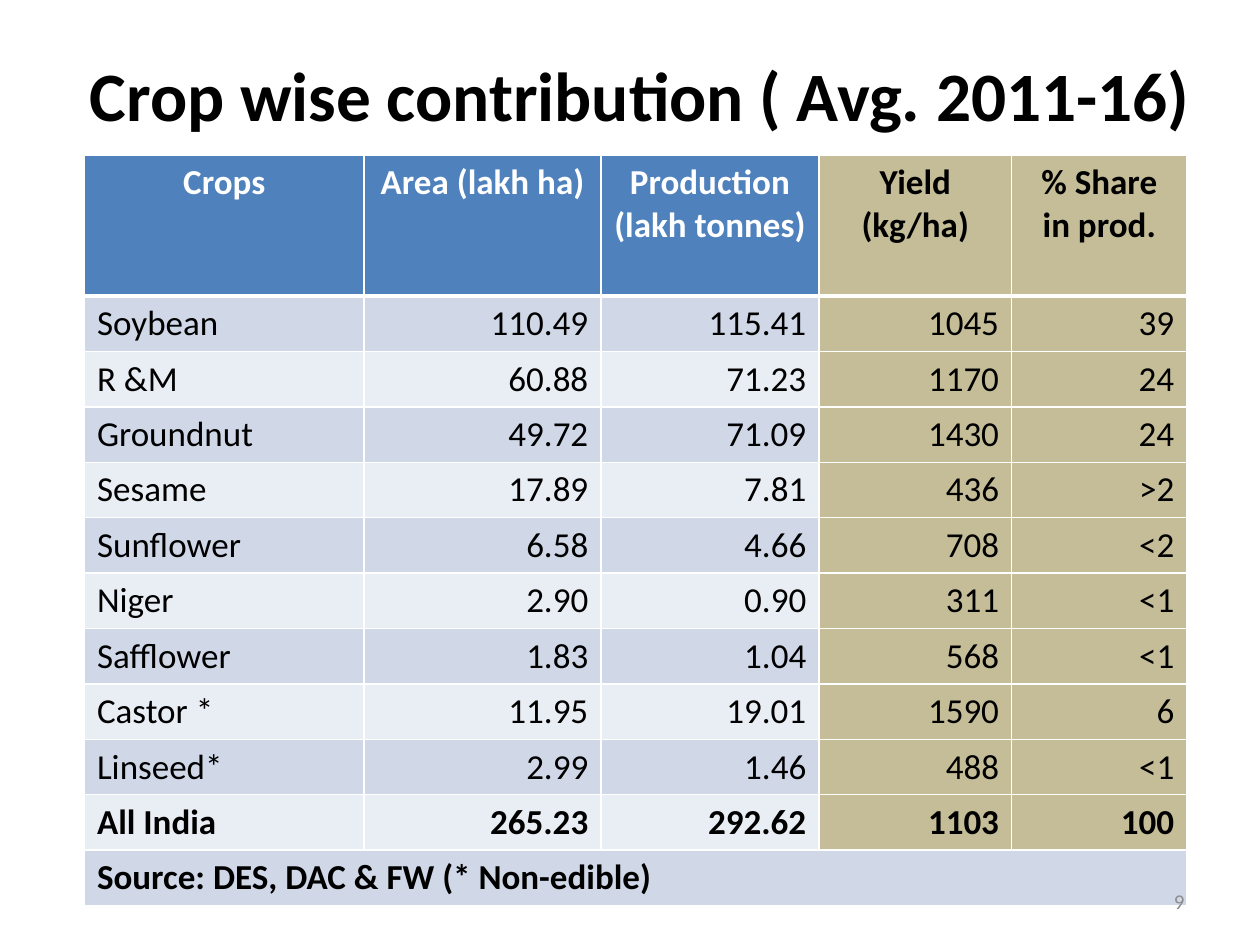
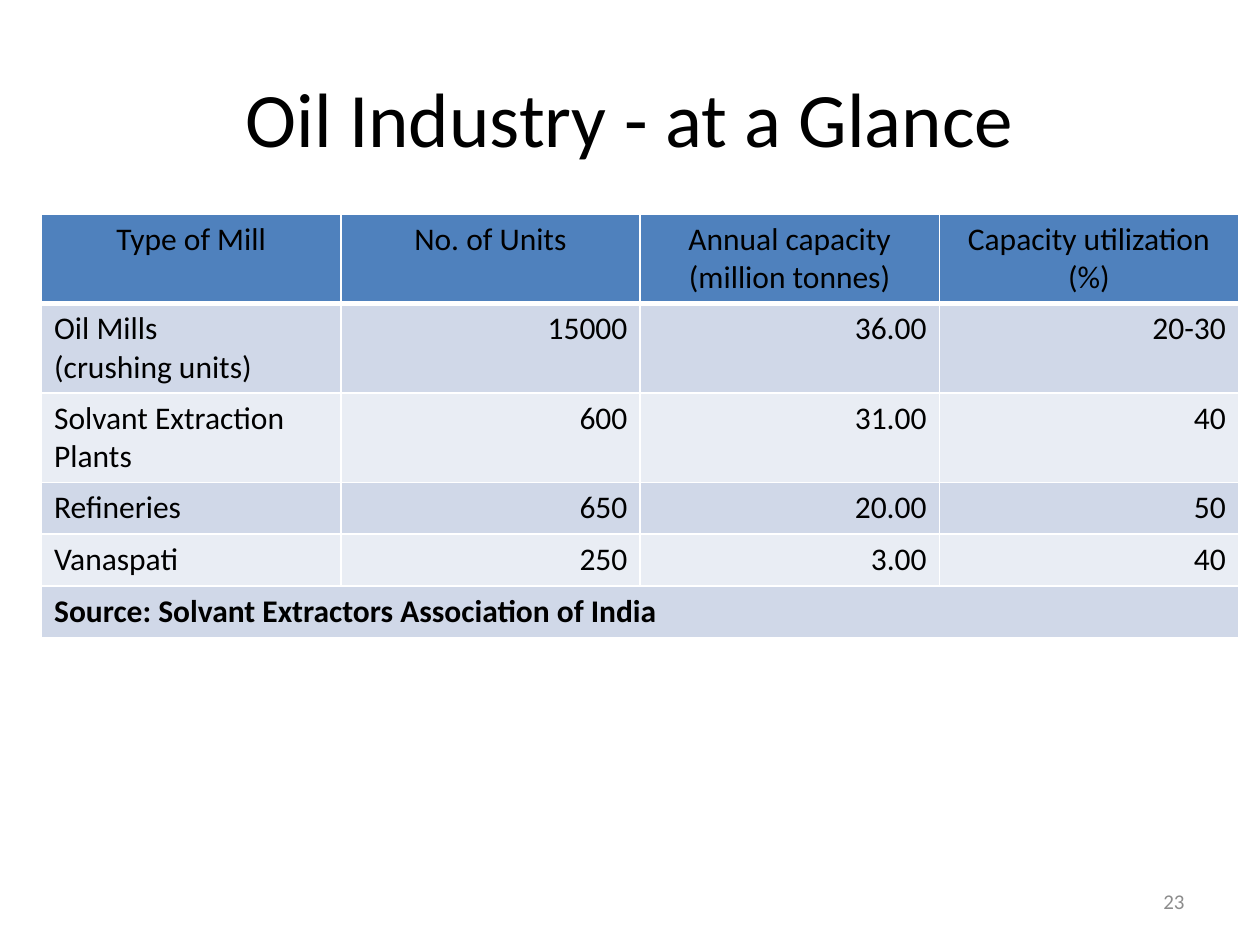
import pptx
import pptx.dml.color
import pptx.enum.text
import pptx.oxml.ns
import pptx.util
from lxml import etree

Inches = pptx.util.Inches
Pt = pptx.util.Pt
ALIGN = {"l": pptx.enum.text.PP_ALIGN.LEFT,
         "c": pptx.enum.text.PP_ALIGN.CENTER,
         "r": pptx.enum.text.PP_ALIGN.RIGHT}
MIDDLE = pptx.enum.text.MSO_ANCHOR.MIDDLE

FONT = "Calibri"
BLACK, WHITE, GREY = "000000", "FFFFFF", "8C8C8C"
BLUE, TAN = "4F81BD", "C4BD97"
BANDS = ["E9EDF4", "D0D8E8"]


def rgb(color):
    return pptx.dml.color.RGBColor.from_string(color)


def write(tf, text, size=18, color=BLACK, bold=False, align="l"):
    """Fill a text frame with one paragraph in a single format."""
    tf.word_wrap = True
    p = tf.paragraphs[0]
    p.text = text
    p.alignment = ALIGN[align]
    for r in p.runs:
        r.font.name = FONT
        r.font.size = Pt(size)
        r.font.bold = bold
        r.font.color.rgb = rgb(color)


slides = [
    dict(
        title="Crop wise contribution ( Avg. 2011-16)",
        title_box=(0.33, 0.5, 9.5, 0.49), title_size=39.6, title_bold=True,
        number="9", left=0.67, top=1.23, size=20,
        widths=[2.22, 1.88, 1.73, 1.53, 1.39],
        heights=[1.12] + [0.44] * 11,
        header_color=WHITE, header_bold=True, tan_from=3, bold_from=10,
        rows=[
            ["Crops", "Area (lakh ha)", "Production (lakh tonnes)",
             "Yield (kg/ha)", "% Share in prod."],
            ["Soybean", "110.49", "115.41", "1045", "39"],
            ["R &M", "60.88", "71.23", "1170", "24"],
            ["Groundnut", "49.72", "71.09", "1430", "24"],
            ["Sesame", "17.89", "7.81", "436", ">2"],
            ["Sunflower", "6.58", "4.66", "708", "<2"],
            ["Niger", "2.90", "0.90", "311", "<1"],
            ["Safflower", "1.83", "1.04", "568", "<1"],
            ["Castor *", "11.95", "19.01", "1590", "6"],
            ["Linseed*", "2.99", "1.46", "488", "<1"],
            ["All India", "265.23", "292.62", "1103", "100"],
            ["Source: DES, DAC & FW (* Non-edible)"],
        ],
    ),
    dict(
        title="Oil Industry - at a Glance",
        title_box=(0.5, 0.3, 9, 1.25), title_size=44, title_bold=False,
        number="23", left=0.33, top=1.7, size=18,
        widths=[2.375] * 4,
        heights=[0.71] * 3 + [0.41] * 3,
        header_color=BLACK, header_bold=False, tan_from=4, bold_from=5,
        rows=[
            ["Type of Mill", "No. of Units",
             "Annual capacity (million tonnes)", "Capacity utilization (%)"],
            ["Oil Mills\v(crushing units)", "15000", "36.00", "20-30"],
            ["Solvant Extraction Plants", "600", "31.00", "40"],
            ["Refineries", "650", "20.00", "50"],
            ["Vanaspati", "250", "3.00", "40"],
            ["Source: Solvant Extractors Association of India"],
        ],
    ),
]

prs = pptx.Presentation()
prs.slide_width, prs.slide_height = Inches(10), Inches(7.5)

for d in slides:
    s = prs.slides.add_slide(prs.slide_layouts[6])

    sp = s.shapes.add_textbox(*map(Inches, d["title_box"]))
    sp.text_frame.vertical_anchor = MIDDLE
    write(sp.text_frame, d["title"], size=d["title_size"],
          bold=d["title_bold"], align="c")

    rows, widths, heights = d["rows"], d["widths"], d["heights"]
    last = len(rows) - 1
    table = s.shapes.add_table(
        len(rows), len(widths), Inches(d["left"]), Inches(d["top"]),
        Inches(sum(widths)), Inches(sum(heights))).table
    for column, width in zip(table.columns, widths):
        column.width = Inches(width)
    for row, height in zip(table.rows, heights):
        row.height = Inches(height)
    table.cell(last, 0).merge(table.cell(last, len(widths) - 1))

    for i, values in enumerate(rows):
        for j in range(len(widths)):
            cell = table.cell(i, j)
            tcPr = cell._tc.get_or_add_tcPr()
            for side in "LRTB":
                weight = 3 if i == 0 and side == "B" else 1
                ln = etree.SubElement(tcPr, pptx.oxml.ns.qn("a:ln" + side),
                                      w=str(Pt(weight)))
                fill = etree.SubElement(ln, pptx.oxml.ns.qn("a:solidFill"))
                etree.SubElement(fill, pptx.oxml.ns.qn("a:srgbClr"), val=WHITE)

            tan = j >= d["tan_from"] and i < last
            cell.fill.solid()
            cell.fill.fore_color.rgb = rgb(
                TAN if tan else BLUE if i == 0 else BANDS[i % 2])

            if j >= len(values):
                continue
            if i == 0:
                write(cell.text_frame, values[j], size=d["size"], align="c",
                      color=BLACK if tan else d["header_color"],
                      bold=d["header_bold"])
            else:
                write(cell.text_frame, values[j], size=d["size"],
                      bold=i >= d["bold_from"], align="r" if j else "l")

    sp = s.shapes.add_textbox(Inches(7.17), Inches(6.95), Inches(2.33), Inches(0.4))
    sp.text_frame.vertical_anchor = MIDDLE
    write(sp.text_frame, d["number"], size=12, color=GREY, align="r")

prs.save("out.pptx")
